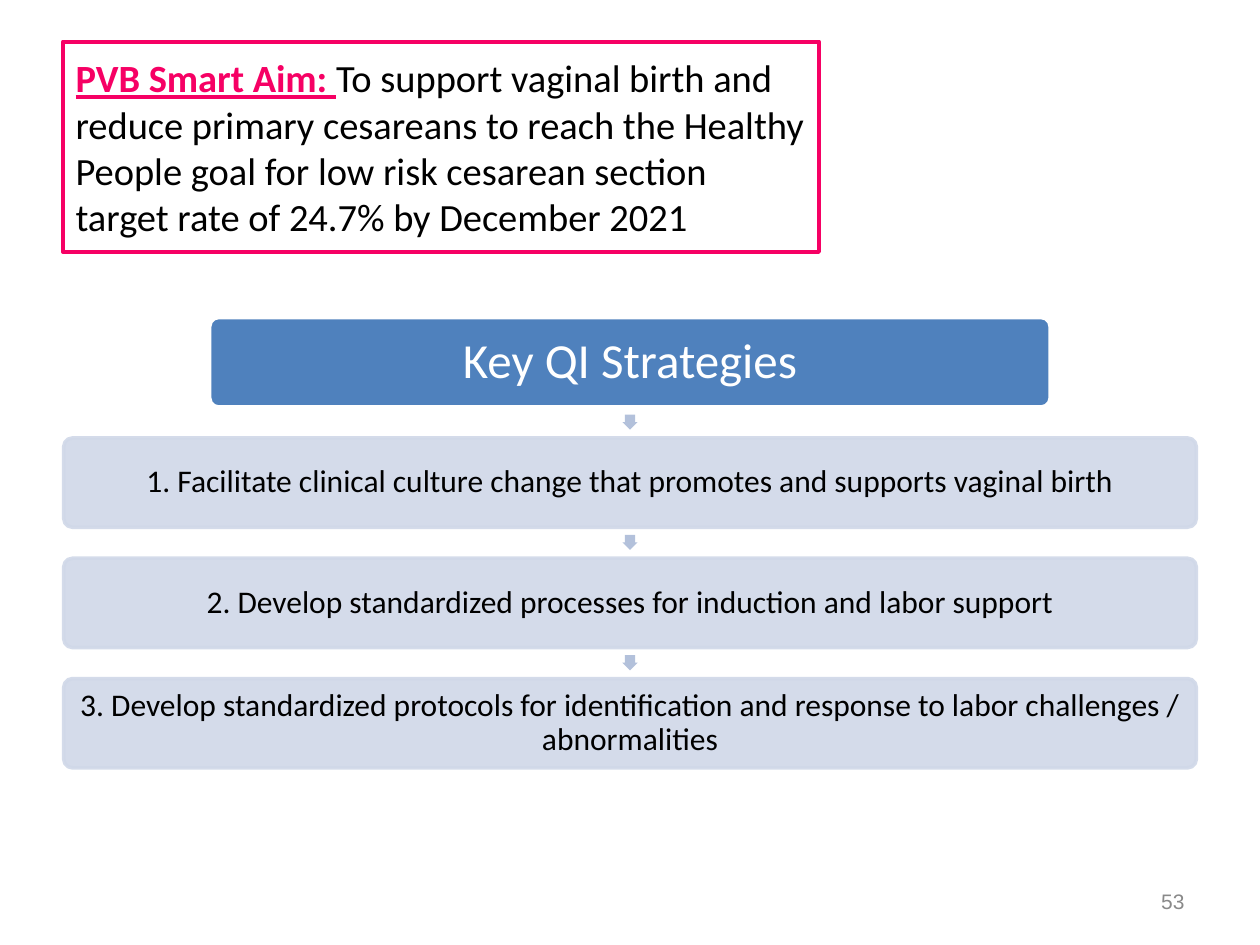
from dataclasses import dataclass

import pptx
import pptx.dml.color
import pptx.enum.shapes
import pptx.enum.text
import pptx.oxml
import pptx.oxml.ns
import pptx.util

Inches = pptx.util.Inches
Pt = pptx.util.Pt
Shape = pptx.enum.shapes.MSO_SHAPE
Align = pptx.enum.text.PP_ALIGN
Anchor = pptx.enum.text.MSO_ANCHOR


@dataclass(frozen=True)
class Theme:
    pink: str = "F60064"
    black: str = "000000"
    white: str = "FFFFFF"
    blue: str = "4F81BD"
    pale: str = "D0D8E8"
    arrow: str = "B3C1DB"
    gray: str = "898989"
    font: str = "Calibri"
    plain: str = "Arial"
    head: int = 28
    aim: int = 22
    step: int = 18
    small: int = 12


@dataclass(frozen=True)
class Box:
    text: str
    width: float
    fill: str
    line: str
    ink: str
    size: int
    alpha: int = 100


THEME = Theme()
WIDTH, HEIGHT = 10, 7.5
TOP, PITCH, TALL = 2.52, 0.955, 0.71
ARROW, DROP = 0.12, 0.77

HEAD = Box("Key QI Strategies", 6.67, THEME.blue, THEME.white, THEME.white, THEME.head)
STEPS = [
    Box(text, 8.99, THEME.pale, THEME.pale, THEME.black, THEME.step, 90)
    for text in (
        "1. Facilitate clinical culture change that promotes and supports vaginal birth",
        "2. Develop standardized processes for induction and labor support",
        "3. Develop standardized protocols for identification and response "
        "to labor challenges / abnormalities",
    )
]


def color(code: str) -> pptx.dml.color.RGBColor:
    return pptx.dml.color.RGBColor.from_string(code)


def paint(fill, code: str, alpha: int = 100) -> None:
    """Fill with a solid colour; alpha is the opacity in percent."""
    fill.solid()
    fill.fore_color.rgb = color(code)
    if alpha < 100:
        node = fill._xPr.find(".//" + pptx.oxml.ns.qn("a:srgbClr"))
        space = pptx.oxml.ns.nsdecls("a")
        node.append(pptx.oxml.parse_xml(f'<a:alpha {space} val="{alpha * 1000}"/>'))


def write(para, text: str, *, size: int, ink: str, font: str = THEME.font,
          bold: bool = False, under: bool = False, align=Align.LEFT) -> None:
    """Add one run of text to a paragraph."""
    para.alignment = align
    run = para.add_run()
    run.text = text
    run.font.name, run.font.size = font, Pt(size)
    run.font.bold, run.font.underline = bold, under
    run.font.color.rgb = color(ink)


def frame(shape, inset: float | None = None):
    """Set up wrapped, centred text and return its first paragraph."""
    body = shape.text_frame
    body.word_wrap = True
    body.auto_size = pptx.enum.text.MSO_AUTO_SIZE.NONE
    body.vertical_anchor = Anchor.MIDDLE
    if inset is not None:
        body.margin_left = body.margin_right = Inches(inset)
        body.margin_top = body.margin_bottom = Inches(inset)
    return body.paragraphs[0]


def center(slide, kind, top: float, width: float, height: float):
    """Add a shape centred across the slide."""
    shape = slide.shapes.add_shape(
        kind, Inches((WIDTH - width) / 2), Inches(top), Inches(width), Inches(height))
    shape.shadow.inherit = False
    return shape


def draw_box(slide, box: Box, top: float) -> None:
    shape = center(slide, Shape.ROUNDED_RECTANGLE, top, box.width, TALL)
    shape.adjustments[0] = 0.1
    paint(shape.fill, box.fill, box.alpha)
    paint(shape.line.fill, box.line, box.alpha)
    shape.line.width = Pt(2)
    para = frame(shape, 0.05)
    para.line_spacing = 0.9
    write(para, box.text, size=box.size, ink=box.ink, align=Align.CENTER)


def draw_arrow(slide, top: float) -> None:
    shape = center(slide, Shape.RIGHT_ARROW, top, ARROW, ARROW)
    shape.rotation = 90
    shape.adjustments[0] = 0.67
    paint(shape.fill, THEME.arrow)
    shape.line.fill.background()


def draw_aim(slide) -> None:
    title = slide.shapes.title
    title.left, title.top = Inches(WIDTH * 0.05), Inches(0.33)
    title.width, title.height = Inches(WIDTH * 0.6), Inches(1.67)
    paint(title.line.fill, THEME.pink)
    title.line.width = Pt(2.25)
    para = frame(title)
    write(para, "PVB Smart Aim: ", size=THEME.aim, ink=THEME.pink, bold=True, under=True)
    write(para, "To support vaginal birth and reduce primary cesareans to reach the "
          "Healthy People goal for low risk cesarean section target rate of 24.7% "
          "by December 2021", size=THEME.aim, ink=THEME.black)


def draw_page(slide) -> None:
    box = slide.shapes.add_textbox(Inches(7.17), Inches(6.95), Inches(2.33), Inches(0.4))
    write(frame(box), "53", size=THEME.small, ink=THEME.gray,
          font=THEME.plain, align=Align.RIGHT)


def main() -> None:
    deck = pptx.Presentation()
    deck.slide_width, deck.slide_height = Inches(WIDTH), Inches(HEIGHT)
    slide = deck.slides.add_slide(deck.slide_layouts.get_by_name("Title Only"))
    draw_aim(slide)
    draw_page(slide)
    for row, box in enumerate([HEAD, *STEPS]):
        top = TOP + row * PITCH
        draw_box(slide, box, top)
        if row < len(STEPS):
            draw_arrow(slide, top + DROP)
    deck.save("out.pptx")


if __name__ == "__main__":
    main()
